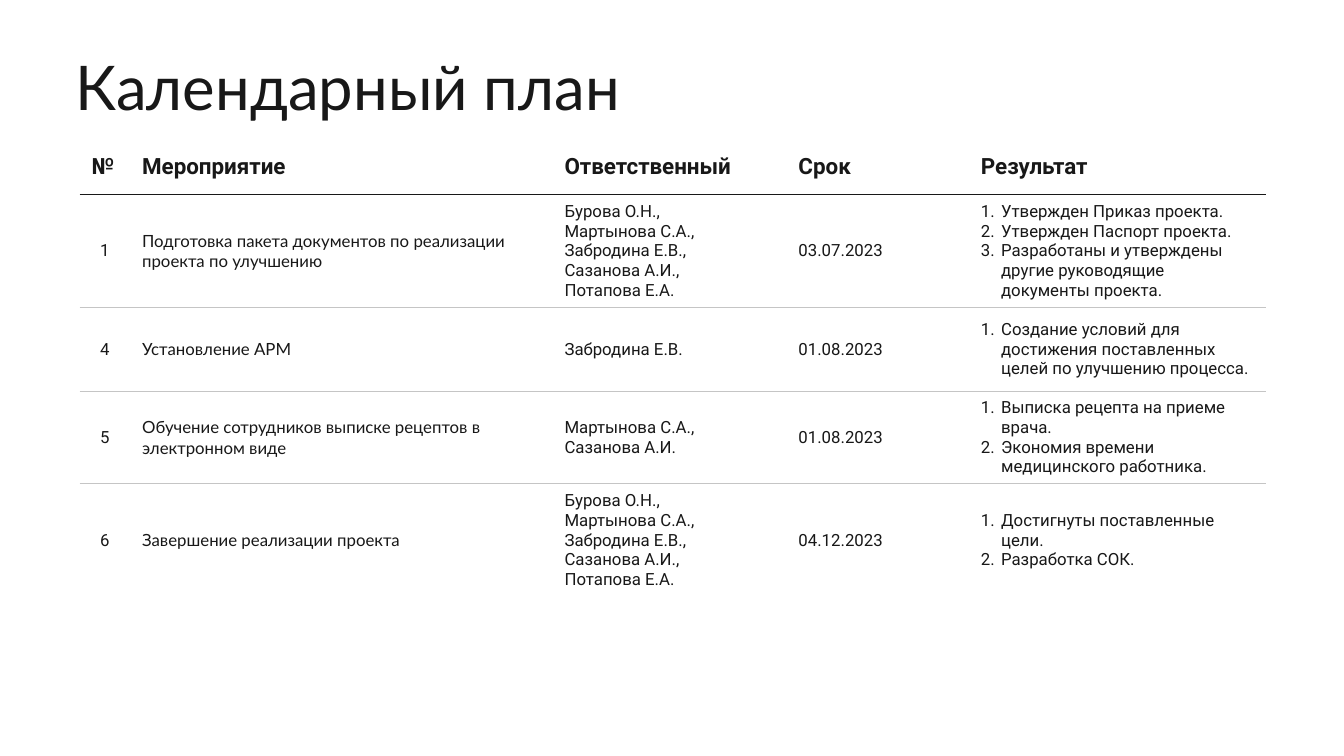
"""Build the project calendar plan slide."""
from lxml import etree
from pptx import Presentation
from pptx.dml.color import RGBColor
from pptx.enum import text
from pptx.oxml import ns
from pptx.util import Inches, Pt

TITLE = "Календарный план"
HEADINGS = ["№", "Мероприятие", "Ответственный", "Срок", "Результат"]
TEAM = ["Бурова О.Н.,", "Мартынова С.А.,", "Забродина Е.В.,", "Сазанова А.И.,", "Потапова Е.А."]
EVENTS = [
    ("1", "Подготовка пакета документов по реализации проекта по улучшению", TEAM, "03.07.2023",
     ["Утвержден Приказ проекта.", "Утвержден Паспорт проекта.",
      "Разработаны и утверждены другие руководящие документы проекта."]),
    ("4", "Установление АРМ", ["Забродина Е.В."], "01.08.2023",
     ["Создание условий для достижения поставленных целей по улучшению процесса."]),
    ("5", "Обучение сотрудников выписке рецептов в электронном виде",
     ["Мартынова С.А.,", "Сазанова А.И."], "01.08.2023",
     ["Выписка рецепта на приеме врача.", "Экономия времени медицинского работника."]),
    ("6", "Завершение реализации проекта", TEAM, "04.12.2023",
     ["Достигнуты поставленные цели.", "Разработка СОК."]),
]
COLUMNS = [0.5, 4.19, 2.32, 1.81, 2.95]
HEADER_HEIGHT, ROW_HEIGHT = 0.55, 0.83
NUMBER, ACTIVITY, RESULT = 0, 1, 4
INK = RGBColor(0x18, 0x18, 0x18)
RULE = RGBColor(0xC5, 0xC5, 0xC5)


def style(para, font, size, bold=False):
    for span in para.runs:
        span.font.name = font
        span.font.size = Pt(size)
        span.font.bold = bold
        span.font.color.rgb = INK


def number(para):
    properties = para._p.get_or_add_pPr()
    properties.set("marL", str(Inches(0.2)))
    properties.set("indent", str(-Inches(0.2)))
    etree.SubElement(properties, ns.qn("a:buFont"), typeface="+mj-lt")
    etree.SubElement(properties, ns.qn("a:buAutoNum"), type="arabicPeriod")


def set_borders(cell, top, bottom):
    properties = cell._tc.get_or_add_tcPr()
    edges = {"a:lnL": None, "a:lnR": None, "a:lnT": top, "a:lnB": bottom}
    for position, (tag, rule) in enumerate(edges.items()):
        line = etree.Element(ns.qn(tag))
        properties.insert(position, line)
        if rule:
            color, width = rule
            line.set("w", str(Pt(width)))
            fill = etree.SubElement(line, ns.qn("a:solidFill"))
            etree.SubElement(fill, ns.qn("a:srgbClr"), val=str(color))
        else:
            etree.SubElement(line, ns.qn("a:noFill"))


def fill_cell(cell, content, row, column):
    cell.text = content if isinstance(content, str) else "\n".join(content)
    cell.vertical_anchor = text.MSO_ANCHOR.MIDDLE
    cell.margin_left = cell.margin_right = Inches(0.12)
    cell.margin_top = cell.margin_bottom = Inches(0.06)
    cell.fill.background()
    for para in cell.text_frame.paragraphs:
        if row == 0:
            style(para, "Roboto", 16, True)
            continue
        style(para, "Lato" if column == ACTIVITY else "Roboto", 12)
        if column == NUMBER:
            para.alignment = text.PP_ALIGN.CENTER
        if column == RESULT:
            number(para)


def add_title(page):
    box = page.shapes.add_textbox(Inches(0.65), Inches(0.52), Inches(12.67), Inches(0.79))
    box.text_frame.word_wrap = True
    box.text_frame.text = TITLE
    para = box.text_frame.paragraphs[0]
    para.line_spacing = 0.9
    style(para, "Lato", 44)


def add_plan(page):
    rows = [HEADINGS, *EVENTS]
    heights = [HEADER_HEIGHT] + [ROW_HEIGHT] * len(EVENTS)
    rules = [None, (INK, 1.5)] + [(RULE, 1)] * (len(EVENTS) - 1) + [None]
    table = page.shapes.add_table(len(rows), len(COLUMNS), Inches(0.79), Inches(1.38),
                                  Inches(sum(COLUMNS)), Inches(sum(heights))).table
    table.first_row = table.horz_banding = False
    for column, width in enumerate(COLUMNS):
        table.columns[column].width = Inches(width)
    for row, contents in enumerate(rows):
        table.rows[row].height = Inches(heights[row])
        for column, content in enumerate(contents):
            cell = table.cell(row, column)
            fill_cell(cell, content, row, column)
            set_borders(cell, rules[row], rules[row + 1])


def main():
    deck = Presentation()
    deck.slide_width, deck.slide_height = Inches(13.33), Inches(7.5)
    page = deck.slides.add_slide(deck.slide_layouts[6])
    add_title(page)
    add_plan(page)
    deck.save("out.pptx")


if __name__ == "__main__":
    main()
